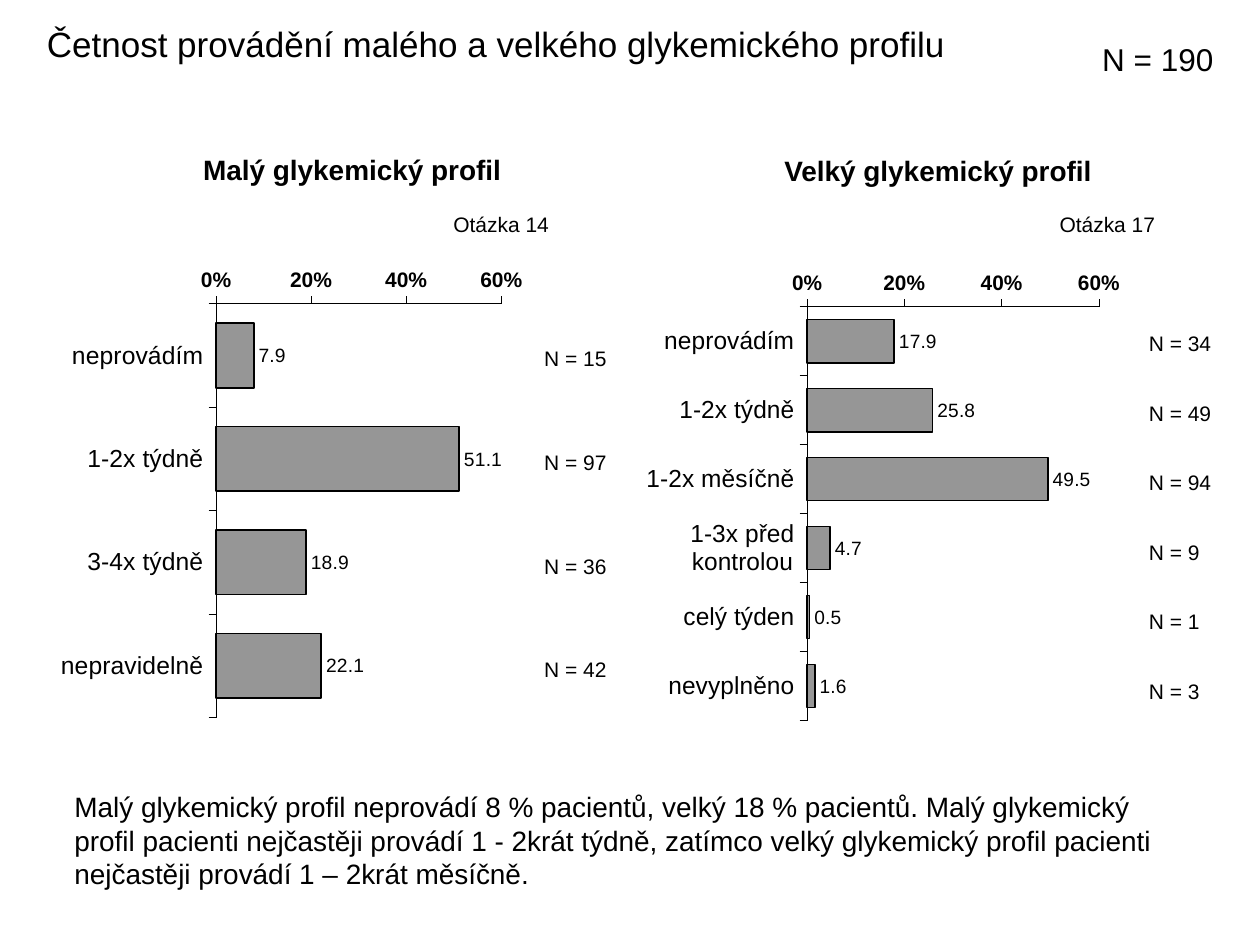
from lxml import etree
from pptx import Presentation
from pptx.chart.data import CategoryChartData
from pptx.dml.color import RGBColor
from pptx.enum.chart import XL_CHART_TYPE, XL_LABEL_POSITION, XL_TICK_MARK
from pptx.enum.text import MSO_ANCHOR, PP_ALIGN
from pptx.util import Cm, Pt

BAR = XL_CHART_TYPE.BAR_CLUSTERED
OUT_END = XL_LABEL_POSITION.OUTSIDE_END
TICK_OUT, TICK_NONE = XL_TICK_MARK.OUTSIDE, XL_TICK_MARK.NONE
TOP, MIDDLE = MSO_ANCHOR.TOP, MSO_ANCHOR.MIDDLE
LEFT, CENTER = PP_ALIGN.LEFT, PP_ALIGN.CENTER

# Content
TITLE = "Četnost provádění malého a velkého glykemického profilu"
TOTAL = "N = 190"
NOTE = ("Malý glykemický profil neprovádí 8 % pacientů, velký 18 % pacientů. "
        "Malý glykemický profil pacienti nejčastěji provádí 1 - 2krát týdně, "
        "zatímco velký glykemický profil pacienti nejčastěji provádí "
        "1 – 2krát měsíčně.")
PANELS = [
    {"head": "Malý glykemický profil", "head_at": (1.5, 2.95),
     "ask": "Otázka 14", "ask_x": 8.89,
     "chart_at": (0.99, 4.72), "plot": (0.346, 0.147, 0.591, 0.856),
     "count_at": (10.72, 6.83), "pitch": 2.09,
     "rows": [("neprovádím", 7.9, 15), ("1-2x týdně", 51.1, 97),
              ("3-4x týdně", 18.9, 36), ("nepravidelně", 22.1, 42)]},
    {"head": "Velký glykemický profil", "head_at": (13.31, 2.97),
     "ask": "Otázka 17", "ask_x": 21.11,
     "chart_at": (13.03, 4.78), "plot": (0.327, 0.147, 0.61, 0.856),
     "count_at": (22.91, 6.53), "pitch": 1.4,
     "rows": [("neprovádím", 17.9, 34), ("1-2x týdně", 25.8, 49),
              ("1-2x měsíčně", 49.5, 94), ("1-3x před kontrolou", 4.7, 9),
              ("celý týden", 0.5, 1), ("nevyplněno", 1.6, 3)]},
]
HEX = {"ink": "000000", "bar": "969696", "page": "FFFFFF"}
FACE = "Arial"


def color(name):
    return RGBColor.from_string(HEX[name])


def style(font, size, bold=False, face=FACE):
    font.name, font.size, font.bold = face, Pt(size), bold
    font.color.rgb = color("ink")


def fill_text(shape, text, size, bold=False, align=LEFT, anchor=TOP, wrap=True):
    frame = shape.text_frame
    frame.word_wrap, frame.vertical_anchor = wrap, anchor
    para = frame.paragraphs[0]
    para.alignment = align
    run = para.add_run()
    run.text = text
    style(run.font, size, bold)
    return frame


def add_text(slide, box, text, size, **look):
    shape = slide.shapes.add_textbox(*map(Cm, box))
    return fill_text(shape, text, size, **look)


def set_line(line, width):
    line.color.rgb = color("ink")
    line.width = Pt(width)


def set_axis(axis, size, bold=False):
    axis.has_major_gridlines = False
    axis.major_tick_mark, axis.minor_tick_mark = TICK_OUT, TICK_NONE
    style(axis.tick_labels.font, size, bold)
    set_line(axis.format.line, 0.25)


def set_plot(chart, parts):
    """Fix the inner plot area as fractions of the chart."""
    area = chart.plots[0]._element.getparent()
    ns = etree.QName(area).namespace
    for old in area.findall(f"{{{ns}}}layout"):
        area.remove(old)
    layout = etree.Element(f"{{{ns}}}layout")
    manual = etree.SubElement(layout, f"{{{ns}}}manualLayout")
    keys = ["layoutTarget", "xMode", "yMode", "x", "y", "w", "h"]
    for key, val in zip(keys, ["inner", "edge", "edge", *parts]):
        etree.SubElement(manual, f"{{{ns}}}{key}").set("val", str(val))
    area.insert(0, layout)


def add_bars(slide, panel):
    names, values, _ = zip(*panel["rows"])
    data = CategoryChartData(number_format="0.0")
    data.categories = names
    data.add_series("Series 1", values)
    x, y = panel["chart_at"]
    chart = slide.shapes.add_chart(
        BAR, Cm(x), Cm(y), Cm(9.73), Cm(9.75), data).chart
    chart.has_title = chart.has_legend = False
    style(chart.font, 10.5, True, "Cabin")
    set_plot(chart, panel["plot"])

    # Axes: first category on top
    cats, vals = chart.category_axis, chart.value_axis
    set_axis(cats, 14.1)
    cats.reverse_order = True
    set_axis(vals, 12, True)
    vals.minimum_scale, vals.maximum_scale, vals.major_unit = 0, 60, 20
    vals.tick_labels.number_format = '0"%"'
    vals.tick_labels.number_format_is_linked = False

    # Bars and value labels
    plot = chart.plots[0]
    plot.gap_width, plot.vary_by_categories = 60, False
    bars = plot.series[0]
    bars.invert_if_negative = False
    bars.format.fill.solid()
    bars.format.fill.fore_color.rgb = color("bar")
    set_line(bars.format.line, 1)
    labels = bars.data_labels
    labels.show_value, labels.position = True, OUT_END
    labels.number_format, labels.number_format_is_linked = "0.0", False
    style(labels.font, 11)


def add_panel(slide, panel):
    add_text(slide, (*panel["head_at"], 11.2, 0.94), panel["head"], 16,
             bold=True, align=CENTER, anchor=MIDDLE)
    add_text(slide, (panel["ask_x"], 4.14, 3.3, 0.76), panel["ask"], 12)
    add_bars(slide, panel)
    x, y = panel["count_at"]
    for i, (_, _, count) in enumerate(panel["rows"]):
        wide = 1.78 if count > 9 else 1.55
        add_text(slide, (x, y + i * panel["pitch"], wide, 0.79),
                 f"N = {count}", 12, anchor=MIDDLE, wrap=False)


def main():
    deck = Presentation()
    deck.slide_width, deck.slide_height = Cm(25.4), Cm(19.05)
    slide = deck.slides.add_slide(deck.slide_layouts[5])
    slide.background.fill.solid()
    slide.background.fill.fore_color.rgb = color("page")

    # Title and sample size
    title = slide.shapes.title
    title.left, title.top = Cm(0.69), Cm(0.33)
    title.width, title.height = Cm(23.22), Cm(1.4)
    fill_text(title, TITLE, 20)
    add_text(slide, (21.97, 0.68, 3.3, 1.02), TOTAL, 18)

    for panel in PANELS:
        add_panel(slide, panel)

    # Summary
    frame = add_text(slide, (1.3, 15.72, 23.01, 2.51), NOTE, 16)
    frame.margin_left = frame.margin_right = Cm(0.2)
    frame.margin_top = frame.margin_bottom = Cm(0.2)
    deck.save("out.pptx")


if __name__ == "__main__":
    main()
